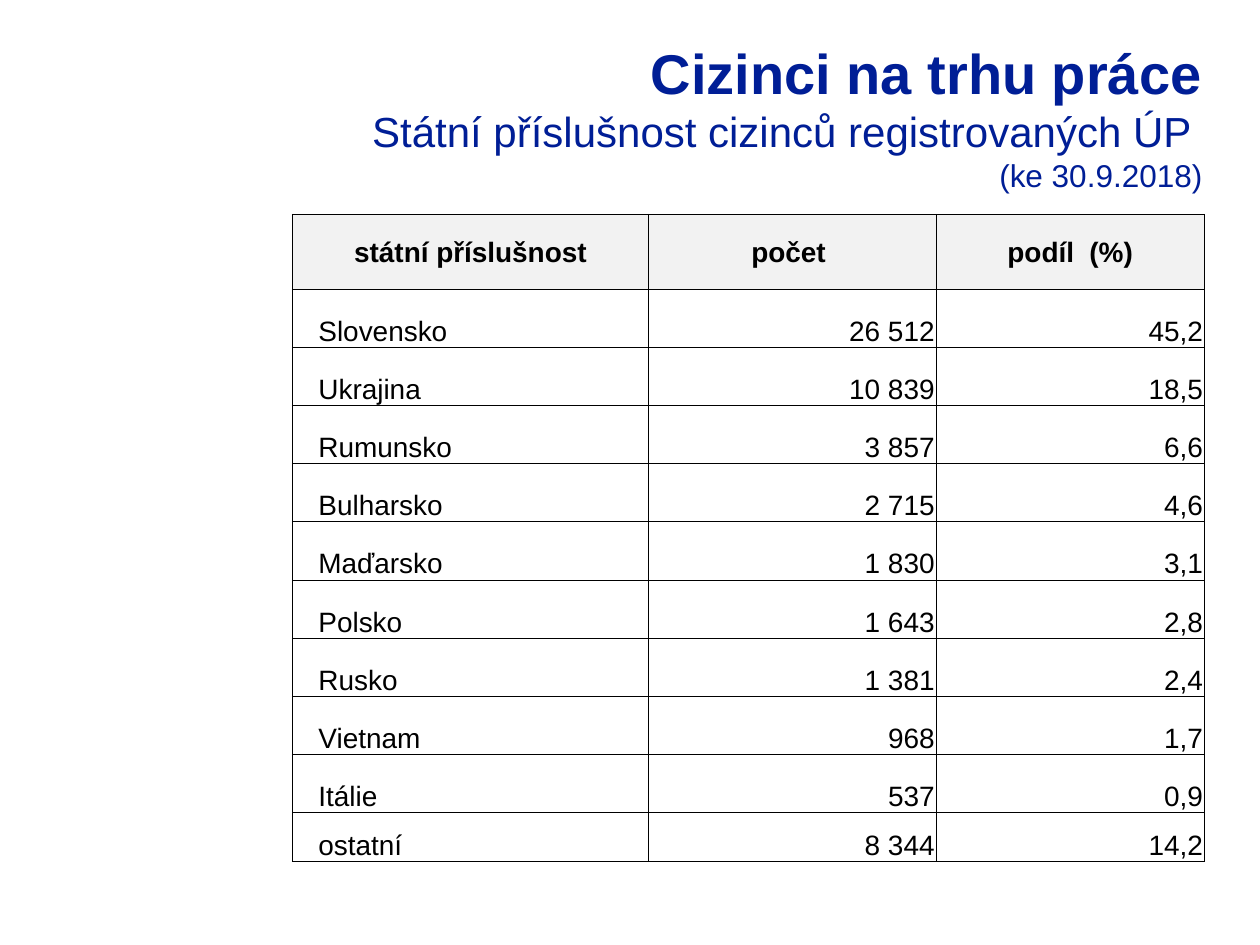
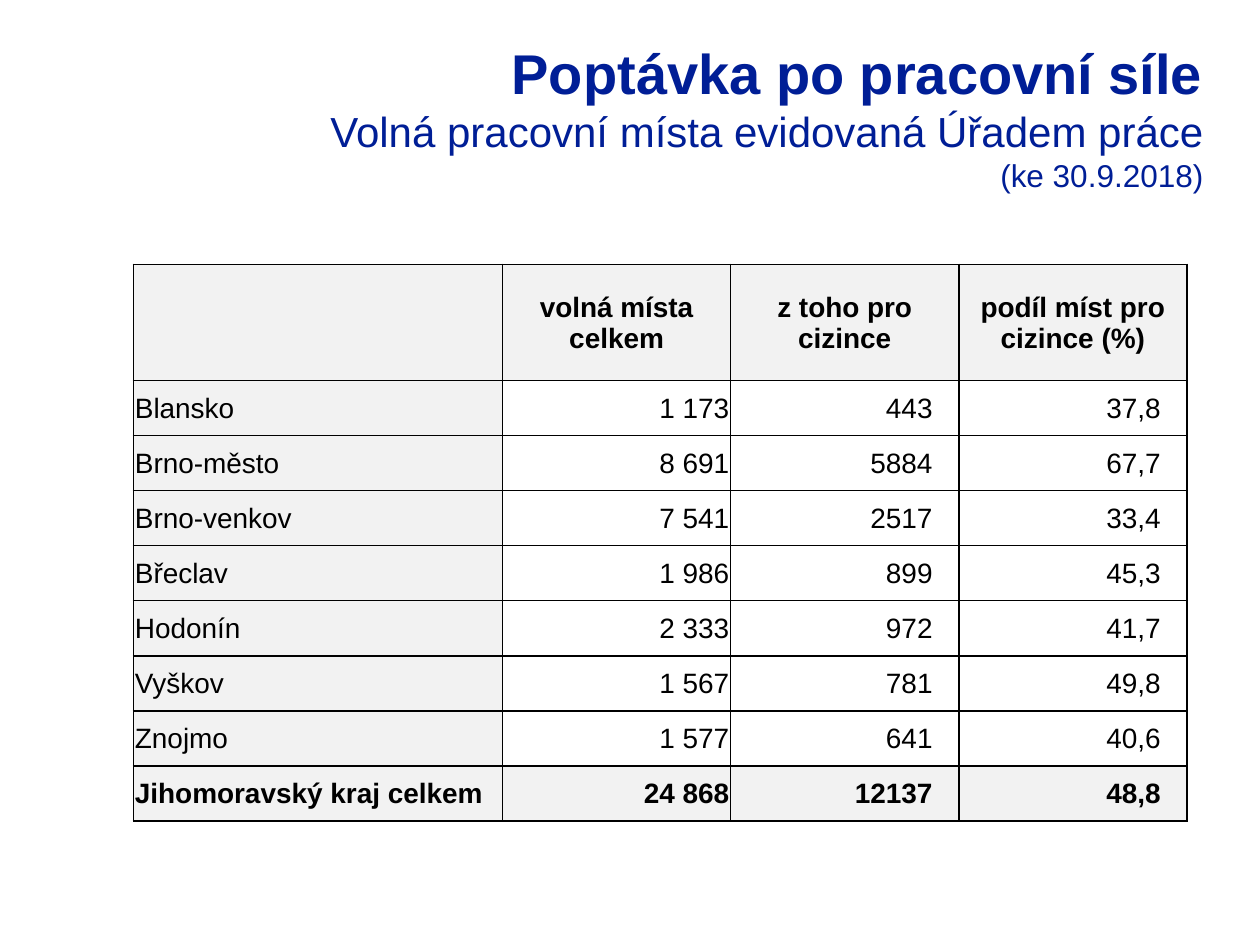
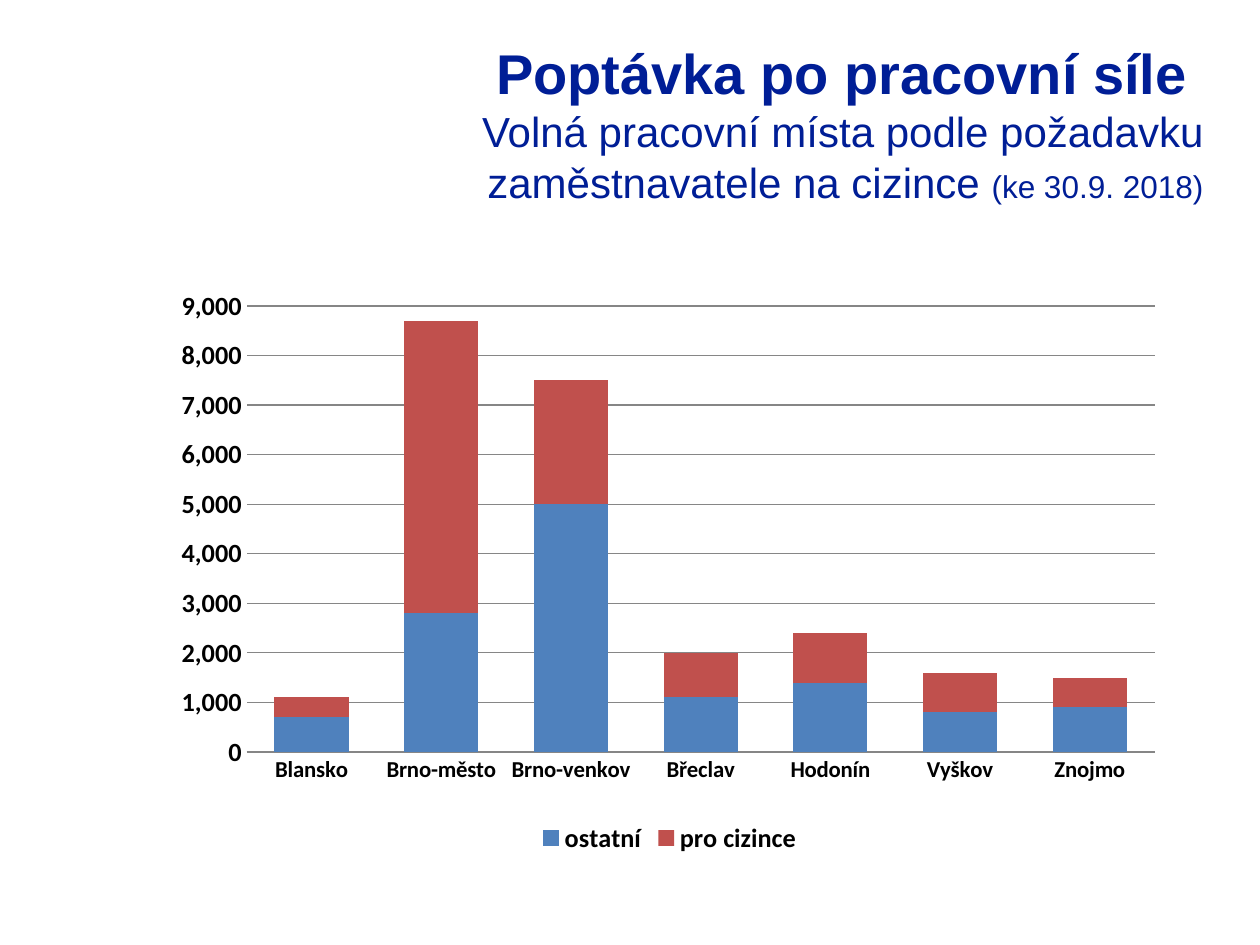
from dataclasses import dataclass

from lxml import etree
from pptx import Presentation
from pptx import util as u
from pptx.chart.data import CategoryChartData
from pptx.dml.color import RGBColor
from pptx.enum import chart as charts
from pptx.enum import text
from pptx.oxml import ns

LEFT, CENTER, RIGHT = text.PP_ALIGN.LEFT, text.PP_ALIGN.CENTER, text.PP_ALIGN.RIGHT
MIDDLE, BOTTOM = text.MSO_ANCHOR.MIDDLE, text.MSO_ANCHOR.BOTTOM


@dataclass(frozen=True)
class Theme:
    font: str = "Arial"
    chart_font: str = "Calibri"
    heading: str = "001E96"
    ink: str = "000000"
    paper: str = "FFFFFF"
    shade: str = "F2F2F2"
    grid: str = "868686"
    series: tuple = ("4F81BD", "C0504D")
    title_size: int = 32
    subtitle_size: int = 24
    date_size: int = 18
    table_size: int = 16
    category_size: int = 13
    value_size: int = 15
    tight: float = 0.03
    indent: float = 0.53


def rgb(code):
    return RGBColor.from_string(code)


class Deck:
    def __init__(self, theme):
        self.theme = theme
        self.prs = Presentation()
        self.prs.slide_width, self.prs.slide_height = u.Cm(25.4), u.Cm(19.05)
        self.slide = None

    def new_slide(self):
        self.slide = self.prs.slides.add_slide(self.prs.slide_layouts[5])

    def style(self, font, size, bold, color=None, name=None):
        font.name = name or self.theme.font
        font.size = u.Pt(size)
        font.bold = bold
        font.color.rgb = rgb(color or self.theme.ink)

    def title(self, left, width, heading, subtitle, date, date_below=True):
        t = self.theme
        holder = self.slide.shapes.title
        holder.left, holder.top = u.Cm(left), u.Cm(0.53)
        holder.width, holder.height = u.Cm(width), u.Cm(3.81)
        frame = holder.text_frame
        frame.word_wrap = True
        frame.auto_size = text.MSO_AUTO_SIZE.NONE
        frame.vertical_anchor = text.MSO_ANCHOR.TOP
        frame.margin_left = frame.margin_right = frame.margin_top = u.Cm(0.25)
        paragraph = frame.paragraphs[0]
        paragraph.alignment = RIGHT
        self.style(paragraph.font, t.date_size, False, t.heading)
        parts = (
            (heading, t.title_size, True, True),
            (subtitle, t.subtitle_size, False, date_below),
            (date, t.date_size, False, False),
        )
        for words, size, bold, line_break in parts:
            run = paragraph.add_run()
            run.text = words
            run.font.size, run.font.bold = u.Pt(size), bold
            if line_break:
                paragraph.add_line_break()

    def borders(self, cell, points):
        properties = cell._tc.get_or_add_tcPr()
        for index, side in enumerate(("lnL", "lnR", "lnT", "lnB")):
            line = etree.Element(ns.qn(f"a:{side}"), w=str(u.Pt(points)))
            fill = etree.SubElement(line, ns.qn("a:solidFill"))
            etree.SubElement(fill, ns.qn("a:srgbClr"), val=self.theme.ink)
            properties.insert(index, line)

    def table(self, left, top, widths, heights, rows, border, cell_style):
        table = self.slide.shapes.add_table(
            len(rows), len(widths), u.Cm(left), u.Cm(top),
            u.Cm(sum(widths)), u.Cm(sum(heights))).table
        table.first_row = table.horz_banding = False
        for column, width in zip(table.columns, widths):
            column.width = u.Cm(width)
        for row, height in zip(table.rows, heights):
            row.height = u.Cm(height)
        for r, row in enumerate(rows):
            for c, words in enumerate(row):
                self.cell(table.cell(r, c), words, border, **cell_style(r, c))

    def cell(self, cell, words, border, align, anchor=MIDDLE, bold=False,
             shaded=False, left=None, right=None):
        t = self.theme
        cell.fill.solid()
        cell.fill.fore_color.rgb = rgb(t.shade if shaded else t.paper)
        self.borders(cell, border)
        cell.margin_left = u.Cm(left or t.tight)
        cell.margin_right = u.Cm(right or t.tight)
        cell.margin_top, cell.margin_bottom = u.Cm(t.tight), 0
        cell.vertical_anchor = anchor
        cell.text = words
        paragraph = cell.text_frame.paragraphs[0]
        paragraph.alignment = align
        self.style(paragraph.font, t.table_size, bold)

    def stacked_columns(self, box, categories, series, maximum, step, plot_area):
        t = self.theme
        data = CategoryChartData(number_format="#,##0")
        data.categories = categories
        for name, values in series.items():
            data.add_series(name, values)
        chart = self.slide.shapes.add_chart(
            charts.XL_CHART_TYPE.COLUMN_STACKED, *map(u.Cm, box), data).chart
        self.style(chart.font, 10, False, name=t.chart_font)
        chart.has_title = False
        chart.has_legend = True
        chart.legend.position = charts.XL_LEGEND_POSITION.BOTTOM
        chart.legend.include_in_layout = False
        self.style(chart.legend.font, t.value_size, True, name=t.chart_font)

        plot = chart.plots[0]
        plot.gap_width, plot.overlap = 75, 100
        plot.vary_by_categories = False
        for bars, color in zip(plot.series, t.series):
            bars.format.fill.solid()
            bars.format.fill.fore_color.rgb = rgb(color)

        axes = ((chart.category_axis, t.category_size), (chart.value_axis, t.value_size))
        for axis, size in axes:
            axis.major_tick_mark = axis.minor_tick_mark = charts.XL_TICK_MARK.NONE
            self.style(axis.tick_labels.font, size, True, name=t.chart_font)
        chart.category_axis.format.line.color.rgb = rgb(t.grid)
        scale = chart.value_axis
        scale.minimum_scale, scale.maximum_scale, scale.major_unit = 0, maximum, step
        scale.has_major_gridlines = True
        scale.major_gridlines.format.line.color.rgb = rgb(t.grid)
        scale.format.line.fill.background()
        scale.tick_labels.number_format = "#,##0"
        scale.tick_labels.number_format_is_linked = False
        self.place_plot(chart, plot_area)

    def place_plot(self, chart, plot_area):
        area = chart._chartSpace.find(".//" + ns.qn("c:plotArea"))
        layout = area.find(ns.qn("c:layout"))
        if layout is None:
            layout = etree.Element(ns.qn("c:layout"))
            area.insert(0, layout)
        manual = etree.SubElement(layout, ns.qn("c:manualLayout"))
        settings = [("layoutTarget", "inner"), ("xMode", "edge"), ("yMode", "edge")]
        for tag, value in settings + list(zip("xywh", plot_area)):
            etree.SubElement(manual, ns.qn(f"c:{tag}"), val=str(value))


def nationality_cell(row, column):
    if row == 0:
        return dict(align=CENTER, bold=True, shaded=True)
    if column == 0:
        return dict(align=LEFT, anchor=BOTTOM, left=Theme.indent)
    return dict(align=RIGHT, anchor=BOTTOM)


def vacancy_cell(row, column):
    if row == 0:
        return dict(align=CENTER, bold=True, shaded=True)
    total = row == 8
    return dict(align=RIGHT if column else LEFT, bold=total,
                shaded=total or column == 0,
                right=Theme.indent if column > 1 else None)


NATIONALITIES = [
    ("státní příslušnost", "počet ", "podíl  (%)"),
    ("Slovensko", "26 512", "45,2"),
    ("Ukrajina", "10 839", "18,5"),
    ("Rumunsko", "3 857", "6,6"),
    ("Bulharsko", "2 715", "4,6"),
    ("Maďarsko", "1 830", "3,1"),
    ("Polsko", "1 643", "2,8"),
    ("Rusko", "1 381", "2,4"),
    ("Vietnam", "968", "1,7"),
    ("Itálie", "537", "0,9"),
    ("ostatní", "8 344", "14,2"),
]

VACANCIES = [
    ("", "volná místa celkem", "z toho pro cizince", "podíl míst pro cizince (%)"),
    ("Blansko", "1 173", "443", "37,8"),
    ("Brno-město", "8 691", "5884", "67,7"),
    ("Brno-venkov", "7 541", "2517", "33,4"),
    ("Břeclav", "1 986", "899", "45,3"),
    ("Hodonín", "2 333", "972", "41,7"),
    ("Vyškov", "1 567", "781", "49,8"),
    ("Znojmo", "1 577", "641", "40,6"),
    ("Jihomoravský kraj celkem", "24 868", "12137", "48,8"),
]

DEMAND = {
    "ostatní": (700, 2800, 5000, 1100, 1400, 800, 900),
    "pro cizince": (400, 5900, 2500, 900, 1000, 800, 600),
}


def main():
    deck = Deck(Theme())

    deck.new_slide()
    deck.title(6.1, 18.39, "Cizinci na trhu práce",
               "Státní příslušnost cizinců registrovaných ÚP ", "(ke 30.9.2018)")
    deck.table(5.89, 4.32, (7.19, 5.79, 5.41), [1.52] + [1.17] * 9 + [0.99],
               NATIONALITIES, 0.5, nationality_cell)

    deck.new_slide()
    deck.title(5.31, 19.2, "Poptávka po pracovní síle",
               "Volná pracovní místa evidovaná Úřadem práce", "(ke 30.9.2018)")
    deck.table(2.69, 5.33, [7.44] + [4.6] * 3, [2.34] + [1.11] * 8,
               VACANCIES, 1, vacancy_cell)

    deck.new_slide()
    deck.title(3.71, 20.8, "Poptávka po pracovní síle ",
               "Volná pracovní místa podle požadavku zaměstnavatele na cizince ",
               "(ke 30.9. 2018)", date_below=False)
    districts = [row[0] for row in VACANCIES[1:-1]]
    deck.stacked_columns((3.1, 5.33, 20.8, 11.99), districts, DEMAND,
                         9000, 1000, (0.09, 0.07, 0.88, 0.75))

    deck.prs.save("out.pptx")


if __name__ == "__main__":
    main()
